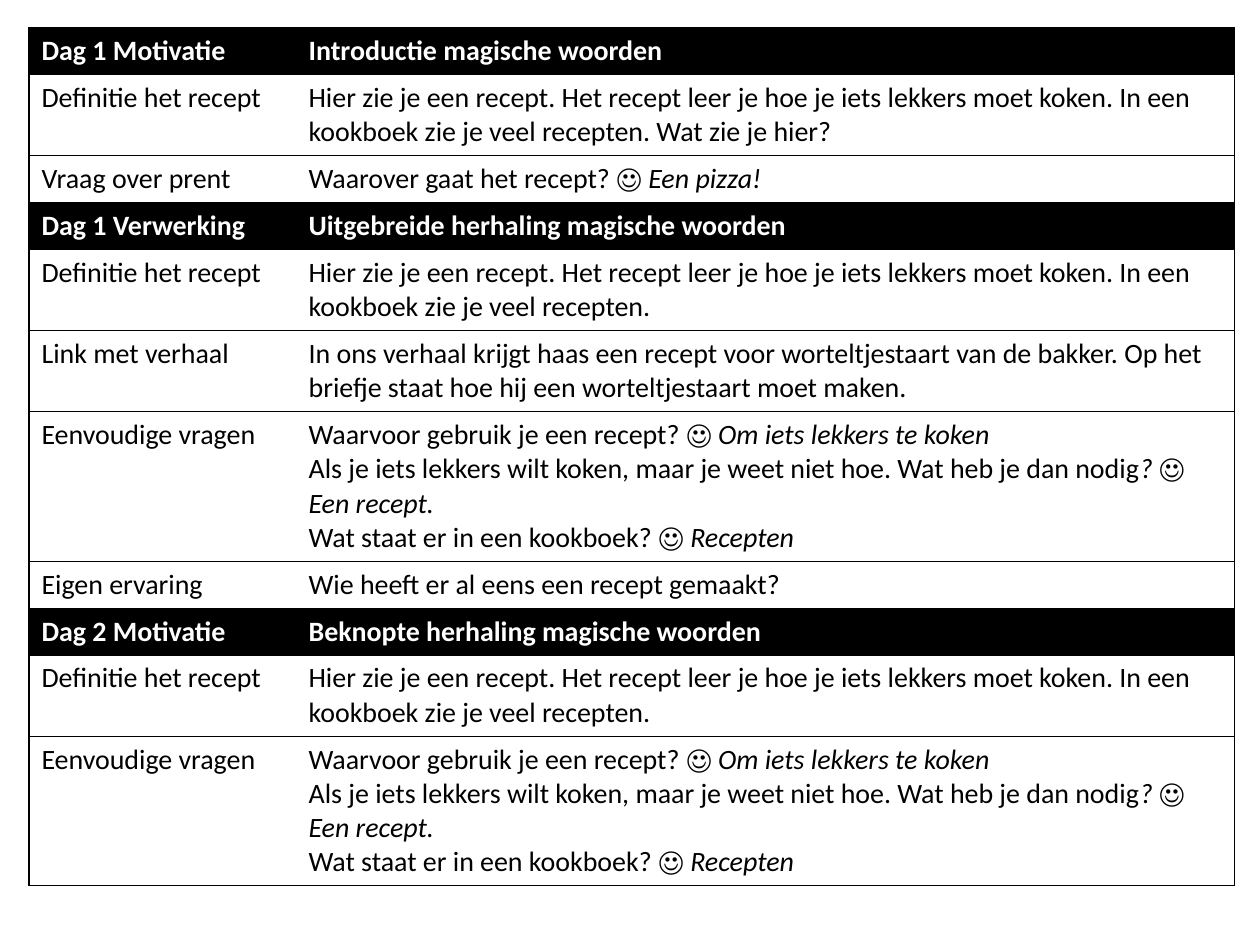
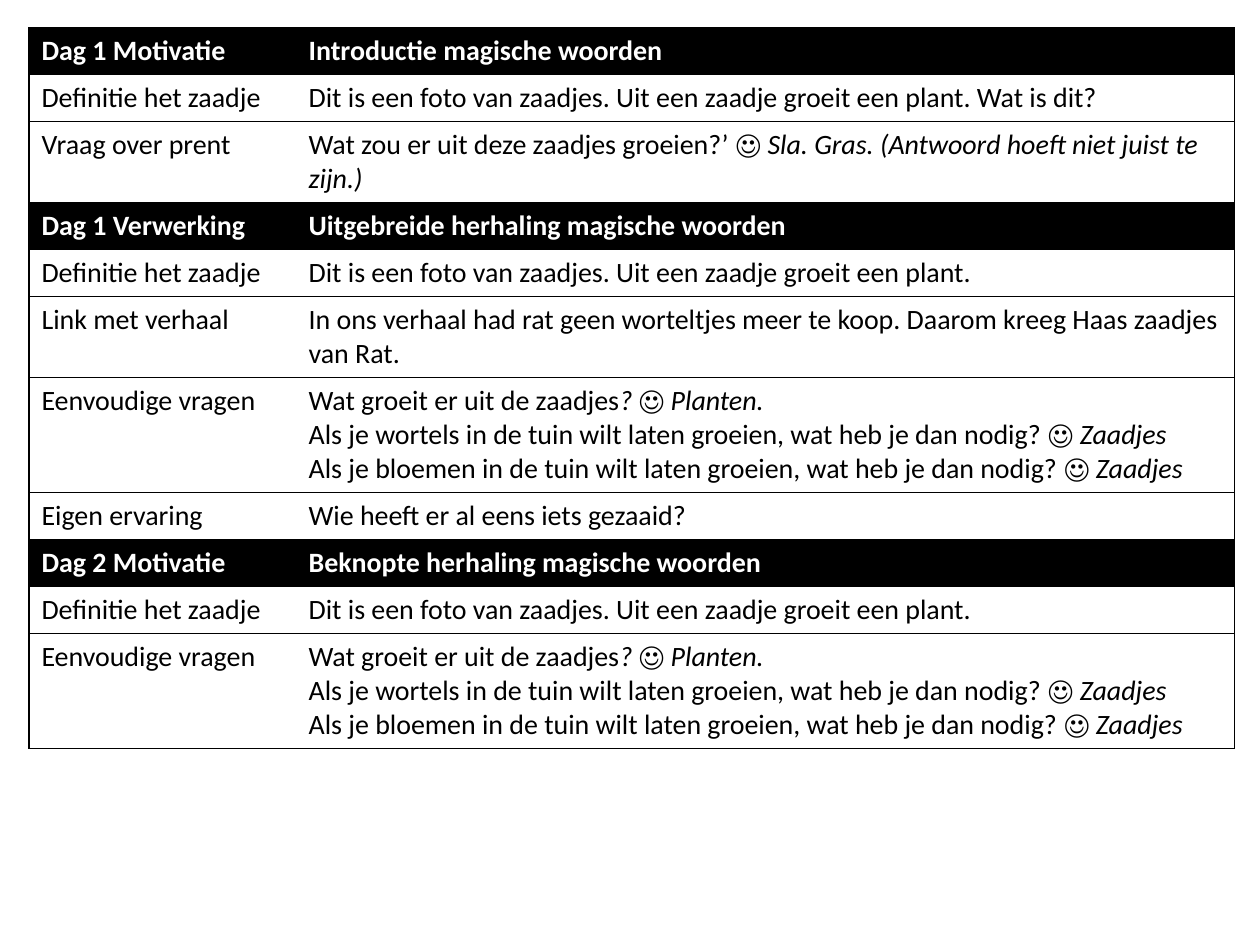
from lxml.etree import SubElement
from pptx import Presentation
from pptx.dml.color import RGBColor
from pptx.oxml.ns import qn
from pptx.util import Pt

BLACK = RGBColor(0, 0, 0)
WHITE = RGBColor(255, 255, 255)
FONT = "Calibri"
TEXT_SIZE = Pt(16)
BORDER = Pt(0.75)
COLUMN_WIDTHS = (Pt(152.64), Pt(536.4))
SHORT_ROW, TALL_ROW = Pt(13.68), Pt(24.48)
SHORT_ROWS = 3
TABLE_LEFT, TABLE_TOP = Pt(16.56), Pt(15.84)
ITALIC_MARK = "*"

RECIPE = {
    "word": "het recept",
    "definition": "Hier zie je een recept. Het recept leer je hoe je iets lekkers moet koken. "
                  "In een kookboek zie je veel recepten.",
    "prompt": "Wat zie je hier?",
    "picture": "Waarover gaat het recept? ☺* Een pizza!*",
    "story": "In ons verhaal krijgt haas een recept voor worteltjestaart van de bakker. "
             "Op het briefje staat hoe hij een worteltjestaart moet maken.",
    "questions": [
        "Waarvoor gebruik je een recept? ☺ *Om iets lekkers te koken*",
        "Als je iets lekkers wilt koken, maar je weet niet hoe. "
        "Wat heb je dan nodig*? *☺ *Een recept.*",
        "Wat staat er in een kookboek? ☺ *Recepten*",
    ],
    "experience": "Wie heeft er al eens een recept gemaakt?",
    "height": Pt(482.4),
}
SEED = {
    "word": "het zaadje",
    "definition": "Dit is een foto van zaadjes. Uit een zaadje groeit een plant.",
    "prompt": "Wat is dit?",
    "picture": "Wat zou er uit deze zaadjes groeien?’ ☺ "
               "*Sla. Gras. (Antwoord hoeft niet juist te zijn.)*",
    "story": "In ons verhaal had rat geen worteltjes meer te koop. "
             "Daarom kreeg Haas zaadjes van Rat.",
    "questions": [
        "Wat groeit er uit de zaadjes*? *☺ *Planten.*",
        "Als je wortels in de tuin wilt laten groeien, wat heb je dan nodig? ☺ *Zaadjes*",
        "Als je bloemen in de tuin wilt laten groeien, wat heb je dan nodig? ☺ *Zaadjes*",
    ],
    "experience": "Wie heeft er al eens iets gezaaid?",
    "height": Pt(405.36),
}


def lesson_rows(lesson):
    definition = (f"Definitie {lesson['word']}", [lesson["definition"]])
    questions = ("Eenvoudige vragen", lesson["questions"])
    sections = [
        ("Dag 1 Motivatie", "Introductie magische woorden", [
            (definition[0], [f"{lesson['definition']} {lesson['prompt']}"]),
            ("Vraag over prent", [lesson["picture"]]),
        ]),
        ("Dag 1 Verwerking", "Uitgebreide herhaling magische woorden", [
            definition,
            ("Link met verhaal", [lesson["story"]]),
            questions,
            ("Eigen ervaring", [lesson["experience"]]),
        ]),
        ("Dag 2 Motivatie", "Beknopte herhaling magische woorden", [definition, questions]),
    ]
    for day, title, activities in sections:
        yield True, day, [title]
        for label, lines in activities:
            yield False, label, lines


def set_borders(cell, open_side):
    properties = cell._tc.get_or_add_tcPr()
    for position, side in enumerate(("lnL", "lnR", "lnT", "lnB")):
        line = SubElement(properties, qn(f"a:{side}"), w=str(int(BORDER)))
        if side == open_side:
            SubElement(line, qn("a:noFill"))
        else:
            fill = SubElement(line, qn("a:solidFill"))
            SubElement(fill, qn("a:srgbClr"), val=str(BLACK))
        properties.insert(position, line)


def write_cell(cell, lines, is_header):
    cell.fill.solid()
    cell.fill.fore_color.rgb = BLACK if is_header else WHITE
    frame = cell.text_frame
    for number, line in enumerate(lines):
        para = frame.add_paragraph() if number else frame.paragraphs[0]
        para.font.name = FONT
        para.font.size = TEXT_SIZE
        para.font.bold = is_header
        para.font.color.rgb = WHITE if is_header else BLACK
        for index, text in enumerate(line.split(ITALIC_MARK)):
            if text:
                span = para.add_run()
                span.text = text
                if index % 2:
                    span.font.italic = True


def add_lesson_table(page, lesson, left, top):
    rows = list(lesson_rows(lesson))
    box = page.shapes.add_table(len(rows), len(COLUMN_WIDTHS), left, top,
                                sum(COLUMN_WIDTHS), lesson["height"])
    table = box.table
    table.first_row = table.horz_banding = False
    for column, width in zip(table.columns, COLUMN_WIDTHS):
        column.width = width
    for number, (is_header, label, lines) in enumerate(rows):
        table.rows[number].height = SHORT_ROW if number < SHORT_ROWS else TALL_ROW
        label_cell, text_cell = table.rows[number].cells
        write_cell(label_cell, [label], is_header)
        write_cell(text_cell, lines, is_header)
        set_borders(label_cell, "lnR")
        set_borders(text_cell, "lnL")
    box.height = lesson["height"]


def main():
    deck = Presentation()
    deck.slide_width, deck.slide_height = Pt(720), Pt(540)
    for lesson in (RECIPE, SEED):
        page = deck.slides.add_slide(deck.slide_layouts[6])
        add_lesson_table(page, lesson, TABLE_LEFT, TABLE_TOP)
    deck.save("out.pptx")


if __name__ == "__main__":
    main()
